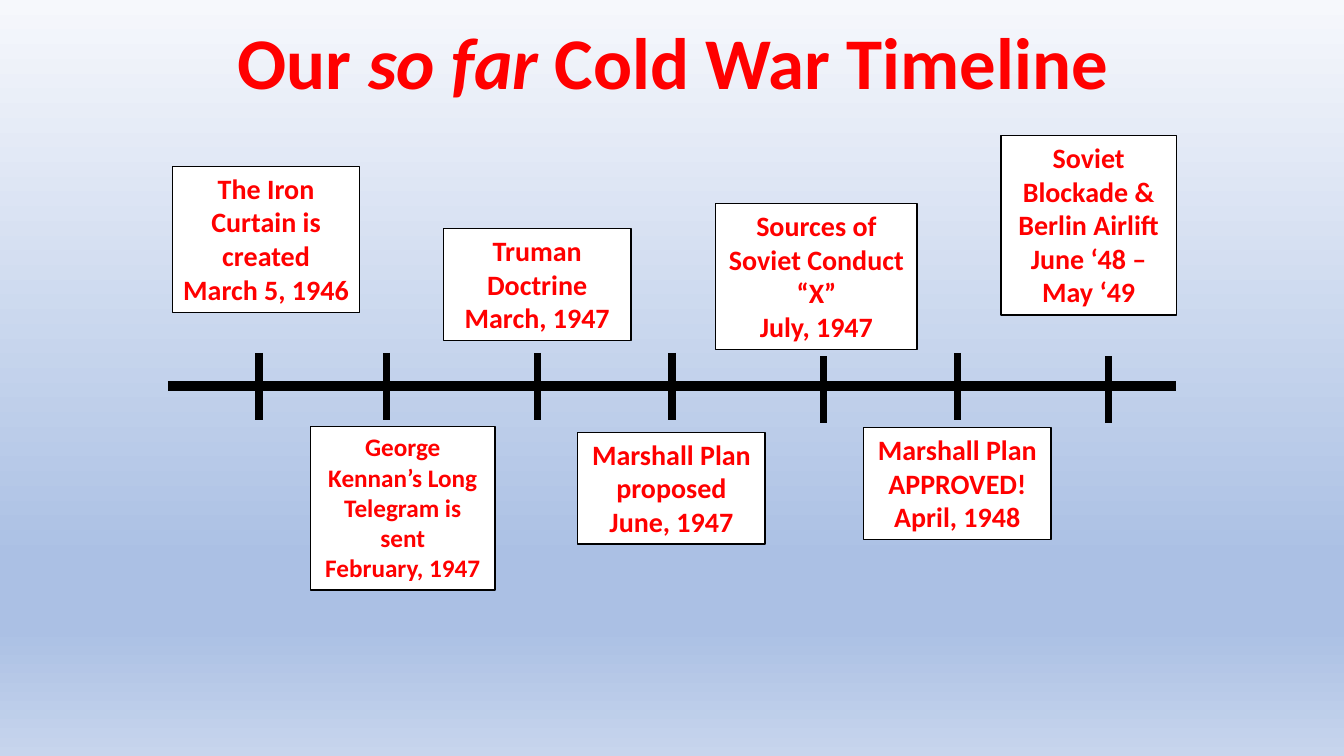
from copy import deepcopy

from lxml.etree import SubElement
from pptx import Presentation
from pptx.dml.color import RGBColor
from pptx.enum.shapes import MSO_CONNECTOR, MSO_SHAPE
from pptx.enum.text import MSO_ANCHOR, MSO_AUTO_SIZE, PP_ALIGN
from pptx.oxml.ns import qn
from pptx.util import Pt

RED = RGBColor(0xFF, 0x00, 0x00)
BLACK = RGBColor(0x00, 0x00, 0x00)
WHITE = RGBColor(0xFF, 0xFF, 0xFF)
PALE = RGBColor(0xF6, 0xF8, 0xFC)
BLUE = RGBColor(0xAB, 0xC0, 0xE4)
LIGHT_BLUE = RGBColor(0xC7, 0xD5, 0xED)

FONT = "Calibri"
GRADIENT = [(0, PALE), (0.74, BLUE), (0.83, BLUE), (1, LIGHT_BLUE)]
TITLE = [("Our ", False), ("so far", True), (" Cold War Timeline", False)]
TITLE_BOX = (121, 8.6, 719.3, 70.6)
AXIS_LEFT, AXIS_RIGHT, AXIS_Y = 120, 840, 276
TICK_LENGTH = 48
EVENTS = [
    ("The Iron Curtain is created\vMarch 5, 1946", 20, (123.1, 118.8, 133.9, 104.4), 185, 252),
    ("George Kennan’s Long Telegram is sent\nFebruary, 1947", 18, (221.8, 304.8, 131.8, 116.6), 276, 252),
    ("Truman Doctrine\nMarch, 1947", 20, (316.8, 163.3, 133.9, 79.9), 384, 252),
    ("Marshall Plan proposed\nJune, 1947", 20, (412.7, 308.8, 133.9, 79.9), 480, 252),
    ("Sources of Soviet Conduct “X”\nJuly, 1947", 20, (511.2, 145.4, 144, 104.4), 588, 254.4),
    ("Marshall Plan APPROVED!\nApril, 1948", 20, (616.9, 305.5, 133.9, 79.9), 684, 252),
    ("Soviet Blockade & Berlin Airlift\nJune ‘48 – May ‘49", 20, (715, 96.8, 125.3, 128.2), 792, 254.4),
]


def paint_background(slide):
    fill = slide.background.fill
    fill.gradient()
    fill.gradient_angle = 270
    stop_list = slide.background._cSld.find(".//" + qn("a:gsLst"))
    while len(stop_list) < len(GRADIENT):
        stop_list.append(deepcopy(stop_list[-1]))
    for stop, (position, color) in zip(fill.gradient_stops, GRADIENT):
        stop.position = position
        stop.color.rgb = color


def format_text(frame, size):
    frame.word_wrap = True
    frame.auto_size = MSO_AUTO_SIZE.SHAPE_TO_FIT_TEXT
    frame.vertical_anchor = MSO_ANCHOR.TOP
    for para in frame.paragraphs:
        para.alignment = PP_ALIGN.CENTER
        for span in para.runs:
            span.font.name = FONT
            span.font.size = Pt(size)
            span.font.bold = True
            span.font.color.rgb = RED


def add_title(slide):
    title = slide.shapes.title
    title.left, title.top, title.width, title.height = map(Pt, TITLE_BOX)
    para = title.text_frame.paragraphs[0]
    for text, italic in TITLE:
        span = para.add_run()
        span.text = text
        span.font.italic = italic
    format_text(title.text_frame, 52)


def add_line(slide, start, end, width):
    line = slide.shapes.add_connector(MSO_CONNECTOR.STRAIGHT, *map(Pt, start + end))
    line.line.color.rgb = BLACK
    line.line.width = Pt(width)
    SubElement(line._element.spPr, qn("a:effectLst"))


def add_event_box(slide, text, size, place):
    box = slide.shapes.add_shape(MSO_SHAPE.RECTANGLE, *map(Pt, place))
    box.shadow.inherit = False
    box.fill.solid()
    box.fill.fore_color.rgb = WHITE
    box.line.color.rgb = BLACK
    box.line.width = Pt(1)
    box.text_frame.text = text
    format_text(box.text_frame, size)


def main():
    deck = Presentation()
    deck.slide_width, deck.slide_height = Pt(960), Pt(540)
    slide = deck.slides.add_slide(deck.slide_layouts[5])
    paint_background(slide)
    add_title(slide)
    add_line(slide, (AXIS_LEFT, AXIS_Y), (AXIS_RIGHT, AXIS_Y), 7.25)
    for text, size, place, tick_x, tick_top in EVENTS:
        add_line(slide, (tick_x, tick_top), (tick_x, tick_top + TICK_LENGTH), 5.25)
        add_event_box(slide, text, size, place)
    deck.save("out.pptx")


if __name__ == "__main__":
    main()
